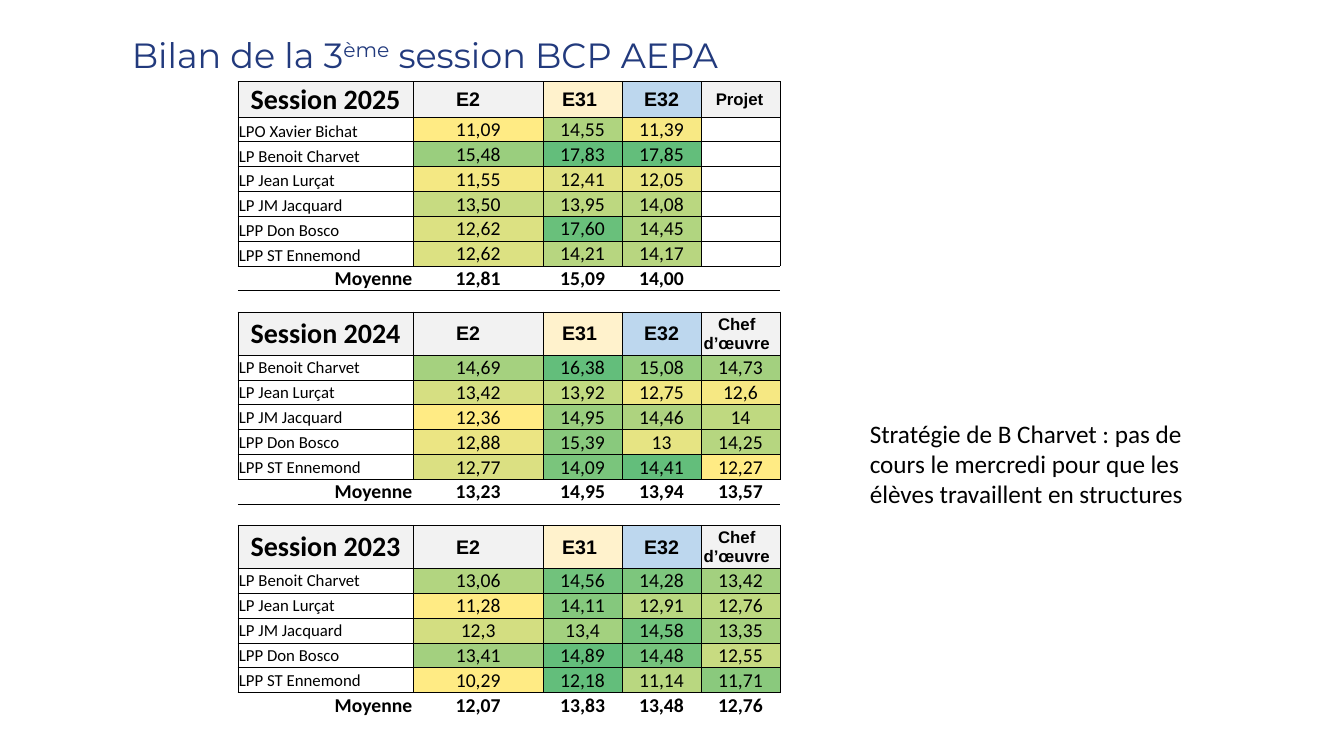
from lxml.etree import SubElement
from pptx import Presentation
from pptx.dml.color import RGBColor
from pptx.enum.text import MSO_ANCHOR as Anchor, PP_ALIGN as Align
from pptx.oxml.ns import qn
from pptx.util import Pt

BLACK = RGBColor(0x00, 0x00, 0x00)
NAVY = RGBColor(0x22, 0x3A, 0x7D)
GREY = RGBColor(0xF2, 0xF2, 0xF2)
CREAM = RGBColor(0xFF, 0xF2, 0xCC)
SKY = RGBColor(0xBD, 0xD7, 0xEE)
SCALE_LOW = RGBColor(0xFF, 0xEB, 0x84)
SCALE_HIGH = RGBColor(0x63, 0xBE, 0x7B)

NO_GRID_STYLE = "{2D5ABB26-0587-4C30-8999-92F81FD0307C}"
COLUMN_WIDTHS = (125.2, 92.8, 56.4, 56.4, 56.4)
ROW_HEIGHT, GAP_HEIGHT = 17.5, 15.1
ALL_SIDES = "LRTB"

# Text, fill, size and right margin of the exam headings
EXAMS = [("E2", GREY, 14, 15), ("E31", CREAM, 14, 5), ("E32", SKY, 14, 0.7)]

# Each group of schools has its own colour scale.
SESSIONS = [
    dict(title="Session 2025", last_exam="Projet", height=24.9, last_margin=2,
         name_anchor=Anchor.BOTTOM,
         groups=[[("LPO Xavier Bichat", "11,09", "14,55", "11,39", ""),
                  ("LP Benoit Charvet", "15,48", "17,83", "17,85", ""),
                  ("LP Jean Lurçat", "11,55", "12,41", "12,05", ""),
                  ("LP JM Jacquard", "13,50", "13,95", "14,08", ""),
                  ("LPP Don Bosco", "12,62", "17,60", "14,45", ""),
                  ("LPP ST Ennemond", "12,62", "14,21", "14,17", "")]],
         means=("12,81", "15,09", "14,00", "")),
    dict(title="Session 2024", last_exam="Chef d’œuvre", height=30.8, last_margin=6,
         name_anchor=Anchor.MIDDLE,
         groups=[[("LP Benoit Charvet", "14,69", "16,38", "15,08", "14,73"),
                  ("LP Jean Lurçat", "13,42", "13,92", "12,75", "12,6"),
                  ("LP JM Jacquard", "12,36", "14,95", "14,46", "14"),
                  ("LPP Don Bosco", "12,88", "15,39", "13", "14,25")],
                 [("LPP ST Ennemond", "12,77", "14,09", "14,41", "12,27")]],
         means=("13,23", "14,95", "13,94", "13,57")),
    dict(title="Session 2023", last_exam="Chef d’œuvre", height=30.8, last_margin=6,
         name_anchor=Anchor.MIDDLE,
         groups=[[("LP Benoit Charvet", "13,06", "14,56", "14,28", "13,42"),
                  ("LP Jean Lurçat", "11,28", "14,11", "12,91", "12,76"),
                  ("LP JM Jacquard", "12,3", "13,4", "14,58", "13,35"),
                  ("LPP Don Bosco", "13,41", "14,89", "14,48", "12,55")],
                 [("LPP ST Ennemond", "10,29", "12,18", "11,14", "11,71")]],
         means=("12,07", "13,83", "13,48", "12,76")),
]


def add_span(para, text, size=14, font="Calibri", color=BLACK, bold=False, raised=False):
    span = para.add_run()
    span.text = text
    span.font.size = Pt(size)
    span.font.name = font
    span.font.bold = bold
    span.font.color.rgb = color
    if raised:
        span.font._element.set("baseline", "30000")


def number(text):
    return float(text.replace(",", "."))


def scale_color(value, low, high):
    share = (value - low) / (high - low)
    return RGBColor(*(round(a + (b - a) * share) for a, b in zip(SCALE_LOW, SCALE_HIGH)))


def draw_borders(cell, sides):
    properties = cell._tc.get_or_add_tcPr()
    for side in sides:
        line = SubElement(properties, qn(f"a:ln{side}"), w=str(Pt(0.5)))
        solid = SubElement(line, qn("a:solidFill"))
        SubElement(solid, qn("a:srgbClr"), val=str(BLACK))


def fill_cell(cell, text="", fill=None, sides=ALL_SIDES, align=Align.CENTER,
              anchor=Anchor.MIDDLE, right=0.7, **font):
    draw_borders(cell, sides)
    if fill is None:
        cell.fill.background()
    else:
        cell.fill.solid()
        cell.fill.fore_color.rgb = fill
    cell.margin_left = cell.margin_top = Pt(0.7)
    cell.margin_right, cell.margin_bottom = Pt(right), Pt(0)
    cell.vertical_anchor = anchor
    para = cell.text_frame.paragraphs[0]
    para.alignment = align
    if text:
        add_span(para, text, **font)
    else:
        SubElement(para._p, qn("a:endParaRPr"), sz="1000")


def fill_header(cells, session):
    fill_cell(cells[0], session["title"], fill=GREY, size=20, bold=True)
    exams = EXAMS + [(session["last_exam"], GREY, 12, session["last_margin"])]
    for cell, (text, fill, size, right) in zip(cells[1:], exams):
        fill_cell(cell, text, fill=fill, size=size, right=right, font="Arial", bold=True)


def fill_group(rows, group, name_anchor):
    marks = [number(mark) for school in group for mark in school[1:] if mark]
    low, high = min(marks), max(marks)
    for school in group:
        cells = next(rows).cells
        fill_cell(cells[0], school[0], align=Align.LEFT, anchor=name_anchor, size=12)
        for column, mark in enumerate(school[1:], 1):
            fill = scale_color(number(mark), low, high) if mark else None
            fill_cell(cells[column], mark, fill=fill)


def fill_means(cells, means):
    fill_cell(cells[0], "Moyenne", sides="T", align=Align.RIGHT, bold=True)
    for column, mean in enumerate(means, 1):
        fill_cell(cells[column], mean, sides="T", bold=True)


def add_results_table(page):
    heights = []
    for session in SESSIONS:
        schools = sum(len(group) for group in session["groups"])
        heights += [session["height"]] + [ROW_HEIGHT] * (schools + 1) + [GAP_HEIGHT]
    heights.pop()

    frame = page.shapes.add_table(len(heights), len(COLUMN_WIDTHS), Pt(170), Pt(58.3),
                                  Pt(sum(COLUMN_WIDTHS)), Pt(sum(heights)))
    table = frame.table
    table.first_row = table.horz_banding = False
    table._tbl.tblPr.find(qn("a:tableStyleId")).text = NO_GRID_STYLE
    for column, width in zip(table.columns, COLUMN_WIDTHS):
        column.width = Pt(width)
    for row, height in zip(table.rows, heights):
        row.height = Pt(height)

    rows = iter(list(table.rows))
    for index, session in enumerate(SESSIONS):
        if index:
            for cell in next(rows).cells:
                fill_cell(cell, sides="B")
        fill_header(list(next(rows).cells), session)
        for group in session["groups"]:
            fill_group(rows, group, session["name_anchor"])
        fill_means(next(rows).cells, session["means"])


def add_title(page):
    title = page.shapes.title
    title.left, title.top, title.width, title.height = Pt(87), Pt(20.2), Pt(851), Pt(37.4)
    title.text_frame.vertical_anchor = Anchor.MIDDLE
    para = title.text_frame.paragraphs[0]
    para.alignment = Align.LEFT
    for text, raised in (("Bilan de la 3", False), ("ème", True), (" session BCP AEPA", False)):
        add_span(para, text, size=25, font="Montserrat", color=NAVY, raised=raised)


def add_note(page, text):
    box = page.shapes.add_textbox(Pt(614.2), Pt(295.2), Pt(271.4), Pt(72.7))
    box.text_frame.word_wrap = True
    add_span(box.text_frame.paragraphs[0], text, size=18)


def main():
    deck = Presentation()
    deck.slide_width, deck.slide_height = Pt(960), Pt(540)
    page = deck.slides.add_slide(deck.slide_layouts[5])
    add_title(page)
    add_results_table(page)
    add_note(page, "Stratégie de B Charvet : pas de cours le mercredi pour que les "
                   "élèves travaillent en structures")
    deck.save("out.pptx")


if __name__ == "__main__":
    main()
